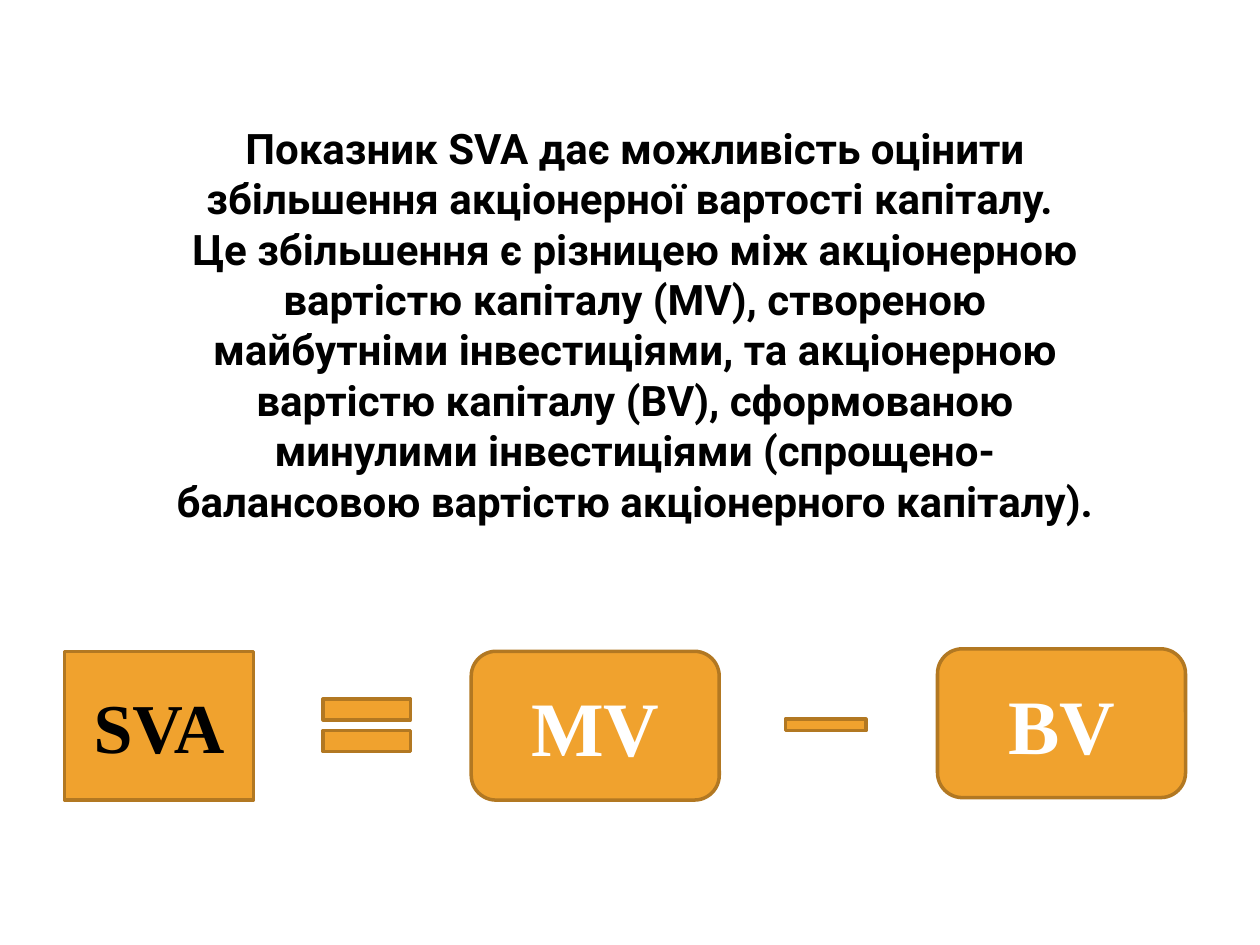
"""Builds the slide that explains SVA as the difference between MV and BV."""
from pptx import Presentation
from pptx import util as u
from pptx.dml import color
from pptx.enum import shapes, text

COLORS = {"fill": "F0A22E", "line": "B27822", "dark": "000000", "light": "FFFFFF"}
STATEMENTS = [
    "Показник SVA дає можливість оцінити збільшення акціонерної вартості капіталу. ",
    "Це збільшення є різницею між акціонерною вартістю капіталу (МV), створеною "
    "майбутніми інвестиціями, та акціонерною вартістю капіталу (BV), сформованою "
    "минулими інвестиціями (спрощено-балансовою вартістю акціонерного капіталу).",
]
KIND = shapes.MSO_SHAPE
FORMULA = [
    (KIND.RECTANGLE, 1.3, 13.13, 3.81, 3, "SVA", 40, "dark"),
    (KIND.MATH_EQUAL, 6.2, 13.72, 2.39, 1.8, "", 0, ""),
    (KIND.ROUNDED_RECTANGLE, 9.5, 13.13, 5, 3, "MV", 44, "light"),
    (KIND.MATH_MINUS, 15.54, 14.12, 2.21, 0.99, "", 0, ""),
    (KIND.ROUNDED_RECTANGLE, 18.9, 13.08, 5, 3, "BV", 44, "light"),
]


def add_run(paragraph, words, font_name, size, color_name):
    paragraph.alignment = text.PP_ALIGN.CENTER
    run = paragraph.add_run()
    run.text = words
    run.font.name = font_name
    run.font.size = u.Pt(size)
    run.font.bold = True
    run.font.color.rgb = color.RGBColor.from_string(COLORS[color_name])


presentation = Presentation()
presentation.slide_width = u.Cm(25.4)
presentation.slide_height = u.Cm(19.05)
slide = presentation.slides.add_slide(presentation.slide_layouts[6])

statement_box = slide.shapes.add_textbox(u.Cm(3.3), u.Cm(2.34), u.Cm(19), u.Cm(8.46))
statement_frame = statement_box.text_frame
statement_frame.word_wrap = True
statement_frame.auto_size = text.MSO_AUTO_SIZE.SHAPE_TO_FIT_TEXT
for index, statement in enumerate(STATEMENTS):
    paragraph = statement_frame.add_paragraph() if index else statement_frame.paragraphs[0]
    add_run(paragraph, statement, "Roboto", 24, "dark")

for kind, left, top, width, height, label, size, color_name in FORMULA:
    shape = slide.shapes.add_shape(kind, u.Cm(left), u.Cm(top), u.Cm(width), u.Cm(height))
    shape.shadow.inherit = False
    shape.fill.solid()
    shape.fill.fore_color.rgb = color.RGBColor.from_string(COLORS["fill"])
    shape.line.color.rgb = color.RGBColor.from_string(COLORS["line"])
    shape.line.width = u.Pt(2)
    if label:
        shape.text_frame.vertical_anchor = text.MSO_ANCHOR.MIDDLE
        add_run(shape.text_frame.paragraphs[0], label, "Times New Roman", size, color_name)

presentation.save("out.pptx")
